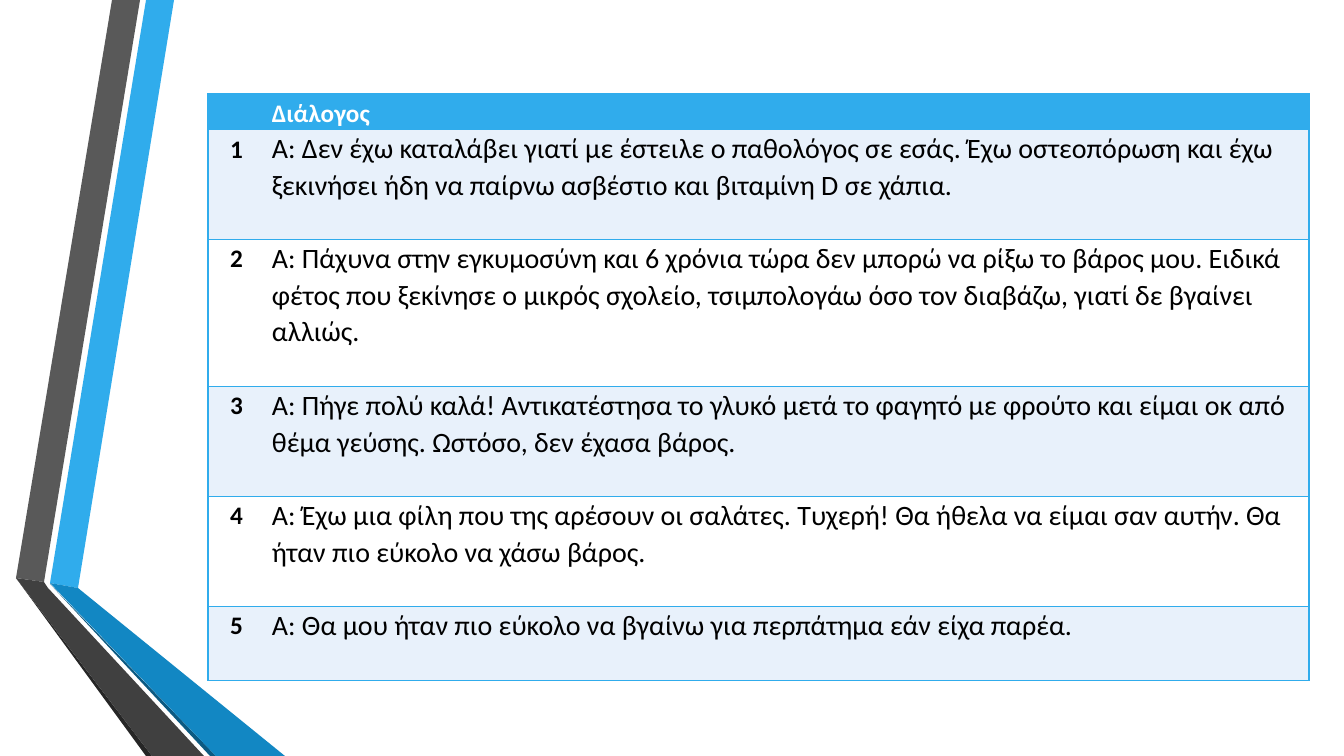
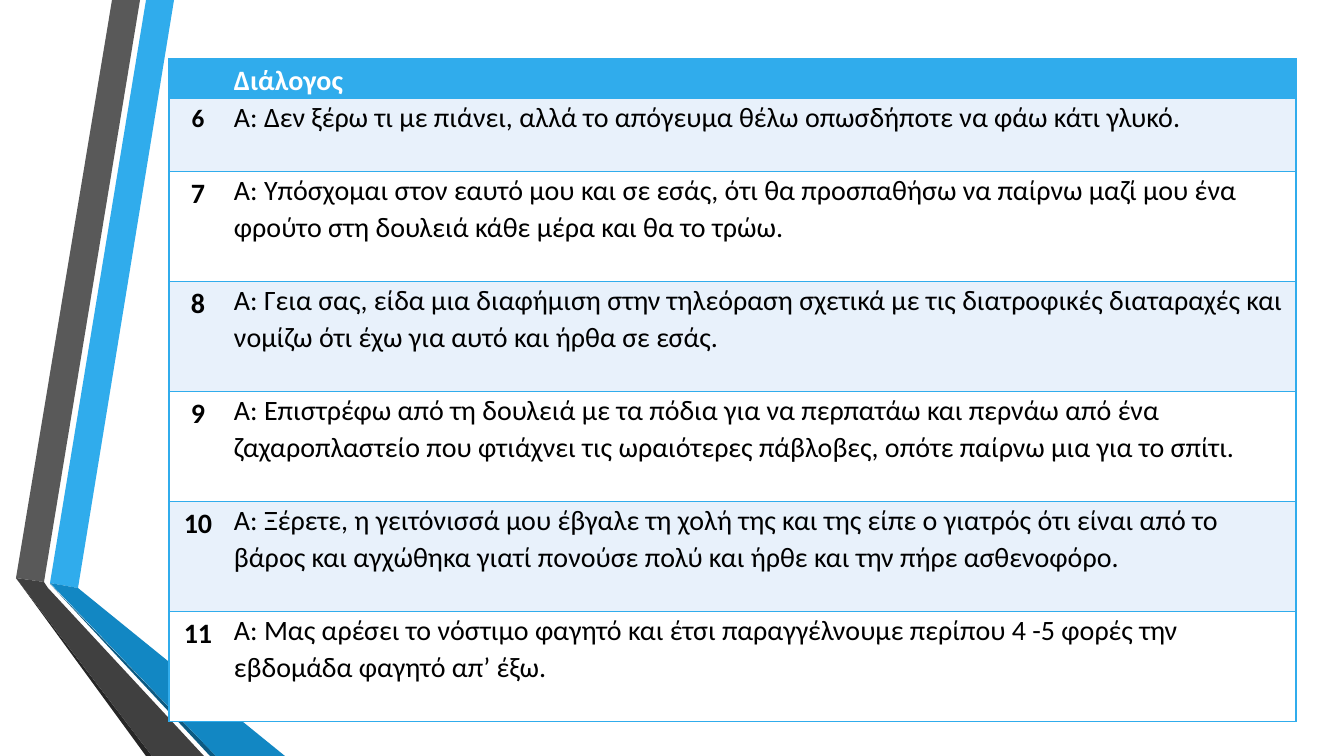
"""Builds two slides of numbered patient dialogues beside a folded ribbon."""
from lxml.etree import SubElement
from pptx import Presentation
from pptx.dml.color import RGBColor
from pptx.enum.text import PP_ALIGN
from pptx.oxml.ns import qn
from pptx.util import Pt

EMU_PER_PX = 914400 / 100.8
SLIDE_WIDTH, SLIDE_HEIGHT = 1344, 756
BLANK_LAYOUT = 6
FONT = "Calibri"
PLAIN_TABLE_STYLE = "{2D5ABB26-0587-4C30-8999-92F81FD0307C}"
BORDER_WIDTH = Pt(1)
CELL_INSET = 7
TEXT_SIZE = 20

BLUE = RGBColor(0x30, 0xAC, 0xEC)
DEEP_BLUE = RGBColor(0x12, 0x87, 0xC3)
NAVY = RGBColor(0x0C, 0x5A, 0x82)
GRAY = RGBColor(0x59, 0x59, 0x59)
CHARCOAL = RGBColor(0x40, 0x40, 0x40)
DARK = RGBColor(0x26, 0x26, 0x26)
PALE = RGBColor(0xE8, 0xF1, 0xFB)
WHITE = RGBColor(0xFF, 0xFF, 0xFF)
BLACK = RGBColor(0x00, 0x00, 0x00)

RIBBON = [
    (BLUE, [(50, 583), (78, 588), (174, 0), (146, 0)]),
    (GRAY, [(140, 0), (112, 0), (16, 578), (44, 582)]),
    (DARK, [(16, 578), (146, 756), (152, 756)]),
    (NAVY, [(50, 584), (210, 756), (216, 756)]),
    (DEEP_BLUE, [(50, 583), (216, 756), (285, 756), (78, 588)]),
    (CHARCOAL, [(16, 578), (152, 756), (204, 756), (48, 588), (44, 582)]),
]

FIRST_DIALOGUES = [
    (110, 18, "Α: Δεν έχω καταλάβει γιατί με έστειλε ο παθολόγος σε εσάς. Έχω οστεοπόρωση και έχω "
              "ξεκινήσει ήδη να παίρνω ασβέστιο και βιταμίνη D σε χάπια."),
    (147, 18, "Α: Πάχυνα στην εγκυμοσύνη και 6 χρόνια τώρα δεν μπορώ να ρίξω το βάρος μου. Ειδικά "
              "φέτος που ξεκίνησε ο μικρός σχολείο, τσιμπολογάω όσο τον διαβάζω, γιατί δε βγαίνει "
              "αλλιώς."),
    (110, 18, "Α: Πήγε πολύ καλά! Αντικατέστησα το γλυκό μετά το φαγητό με φρούτο και είμαι οκ από "
              "θέμα γεύσης. Ωστόσο, δεν έχασα βάρος."),
    (110, 18, "Α: Έχω μια φίλη που της αρέσουν οι σαλάτες. Τυχερή! Θα ήθελα να είμαι σαν αυτήν. Θα "
              "ήταν πιο εύκολο να χάσω βάρος."),
    (74, 18, "Α: Θα μου ήταν πιο εύκολο να βγαίνω για περπάτημα εάν είχα παρέα."),
]
SECOND_DIALOGUES = [
    (73, 18, "Α: Δεν ξέρω τι με πιάνει, αλλά το απόγευμα θέλω οπωσδήποτε να φάω κάτι γλυκό."),
    (110, 20, "Α: Υπόσχομαι στον εαυτό μου και σε εσάς, ότι θα προσπαθήσω να παίρνω μαζί μου ένα "
              "φρούτο στη δουλειά κάθε μέρα και θα το τρώω."),
    (110, 20, "Α: Γεια σας, είδα μια διαφήμιση στην τηλεόραση σχετικά με τις διατροφικές διαταραχές "
              "και νομίζω ότι έχω για αυτό και ήρθα σε εσάς."),
    (110, 20, "Α: Επιστρέφω από τη δουλειά με τα πόδια για να περπατάω και περνάω από ένα "
              "ζαχαροπλαστείο που φτιάχνει τις ωραιότερες πάβλοβες, οπότε παίρνω μια για το σπίτι."),
    (110, 20, "Α: Ξέρετε, η γειτόνισσά μου έβγαλε τη χολή της και της είπε ο γιατρός ότι είναι από το "
              "βάρος και αγχώθηκα γιατί πονούσε πολύ και ήρθε και την πήρε ασθενοφόρο."),
    (110, 20, "Α: Μας αρέσει το νόστιμο φαγητό και έτσι παραγγέλνουμε περίπου 4 -5 φορές την "
              "εβδομάδα φαγητό απ’ έξω."),
]


def px(length):
    """Convert pixels to EMU."""
    return round(length * EMU_PER_PX)


class Deck:
    """Holds the presentation, its shared layout and the current slide."""

    def __init__(self):
        """Start an empty presentation on the blank layout."""
        self.presentation = Presentation()
        self.presentation.slide_width = px(SLIDE_WIDTH)
        self.presentation.slide_height = px(SLIDE_HEIGHT)
        self.layout = self.presentation.slide_layouts[BLANK_LAYOUT]
        self.slide = None

    def add_slide(self):
        """Add a slide and make it current."""
        self.slide = self.presentation.slides.add_slide(self.layout)

    def band(self, color, points):
        """Draw one filled outline on the current slide."""
        builder = self.slide.shapes.build_freeform(*points[0], scale=EMU_PER_PX)
        builder.add_line_segments(points[1:], close=True)
        shape = builder.convert_to_shape()
        shape.shadow.inherit = False
        shape.fill.solid()
        shape.fill.fore_color.rgb = color
        shape.line.fill.background()
        return shape

    def share_ribbon(self):
        """Draw the ribbon and move it to the layout, in place of its placeholders."""
        layout_tree = self.layout.shapes.element
        for placeholder in list(self.layout.placeholders):
            layout_tree.remove(placeholder.element)
        for shape in [self.band(color, points) for color, points in RIBBON]:
            layout_tree.append(shape.element)

    def cell(self, cell, text, size, fill, sides, color=BLACK, bold=True, spacing=1.15, align=PP_ALIGN.LEFT):
        """Write and format one table cell with borders on the given sides."""
        cell.margin_left = cell.margin_right = px(CELL_INSET)
        cell.margin_top = cell.margin_bottom = 0
        properties = cell._tc.get_or_add_tcPr()
        for side in sides:
            line = SubElement(properties, qn(f"a:ln{side}"), w=str(BORDER_WIDTH))
            SubElement(SubElement(line, qn("a:solidFill")), qn("a:srgbClr"), val=str(BLUE))
        cell.fill.solid()
        cell.fill.fore_color.rgb = fill
        paragraph = cell.text_frame.paragraphs[0]
        paragraph.text = text
        paragraph.alignment = align
        paragraph.line_spacing = spacing
        for run in paragraph.runs:
            run.font.name = FONT
            run.font.size = Pt(size)
            run.font.bold = bold
            run.font.color.rgb = color

    def dialogue_table(self, left, top, widths, header, first_number, dialogues):
        """Add a table of numbered dialogues under a header row."""
        header_height, header_size = header
        heights = [header_height] + [height for height, _, _ in dialogues]
        frame = self.slide.shapes.add_table(
            len(heights), len(widths), px(left), px(top), px(sum(widths)), px(sum(heights)))
        next(frame.element.iter(qn("a:tableStyleId"))).text = PLAIN_TABLE_STYLE
        table = frame.table
        for column, width in zip(table.columns, widths):
            column.width = px(width)
        for row, height in zip(table.rows, heights):
            row.height = px(height)
        self.cell(table.cell(0, 0), "", header_size, BLUE, "LTB")
        self.cell(table.cell(0, 1), "Διάλογος", header_size, BLUE, "RTB", color=WHITE)
        for index, (_, number_size, text) in enumerate(dialogues, start=1):
            fill = PALE if index % 2 else WHITE
            number = str(first_number + index - 1)
            self.cell(table.cell(index, 0), number, number_size, fill, "LTB", align=PP_ALIGN.CENTER)
            self.cell(table.cell(index, 1), text, TEXT_SIZE, fill, "RTB", bold=False, spacing=1.07)


def main():
    """Build and save the presentation."""
    deck = Deck()
    deck.add_slide()
    deck.share_ribbon()
    deck.dialogue_table(208, 94, (57, 1044), (34, 18), 1, FIRST_DIALOGUES)
    deck.add_slide()
    deck.dialogue_table(169, 59, (58, 1069), (39, 20), 6, SECOND_DIALOGUES)
    deck.presentation.save("out.pptx")


if __name__ == "__main__":
    main()
